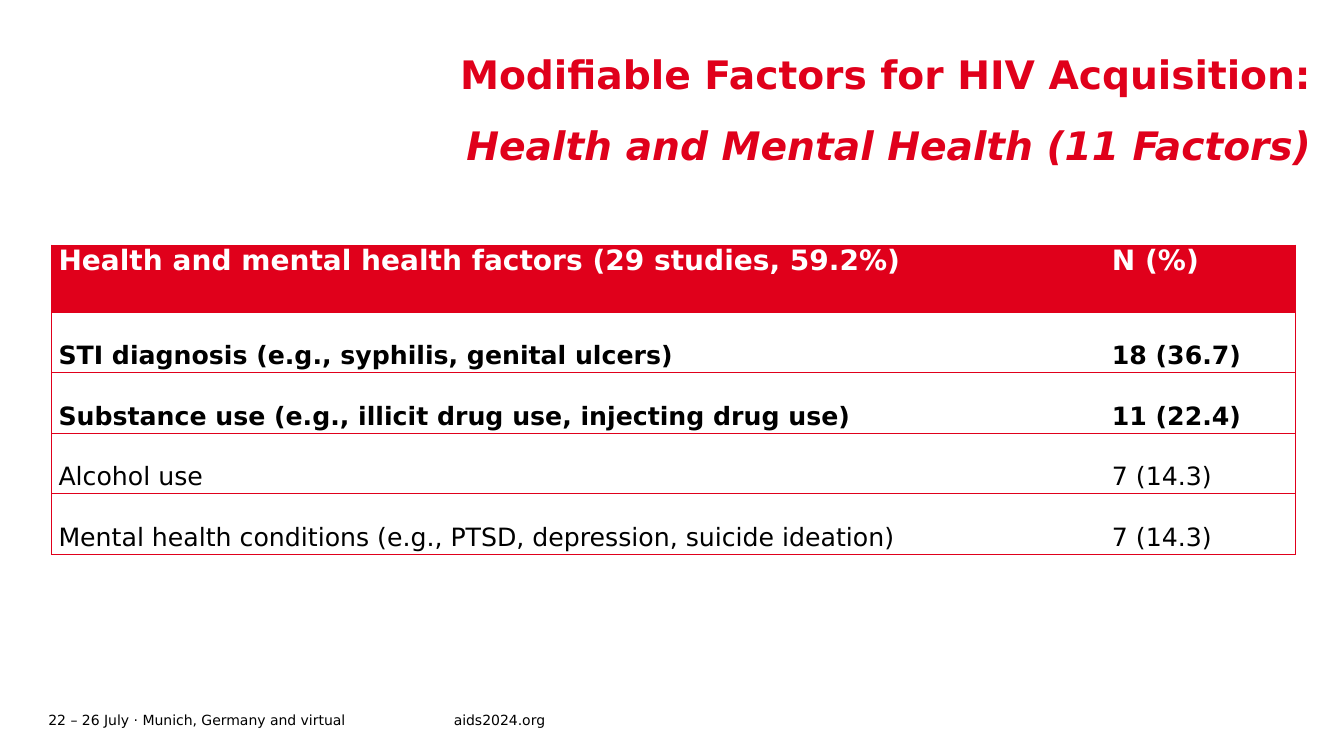
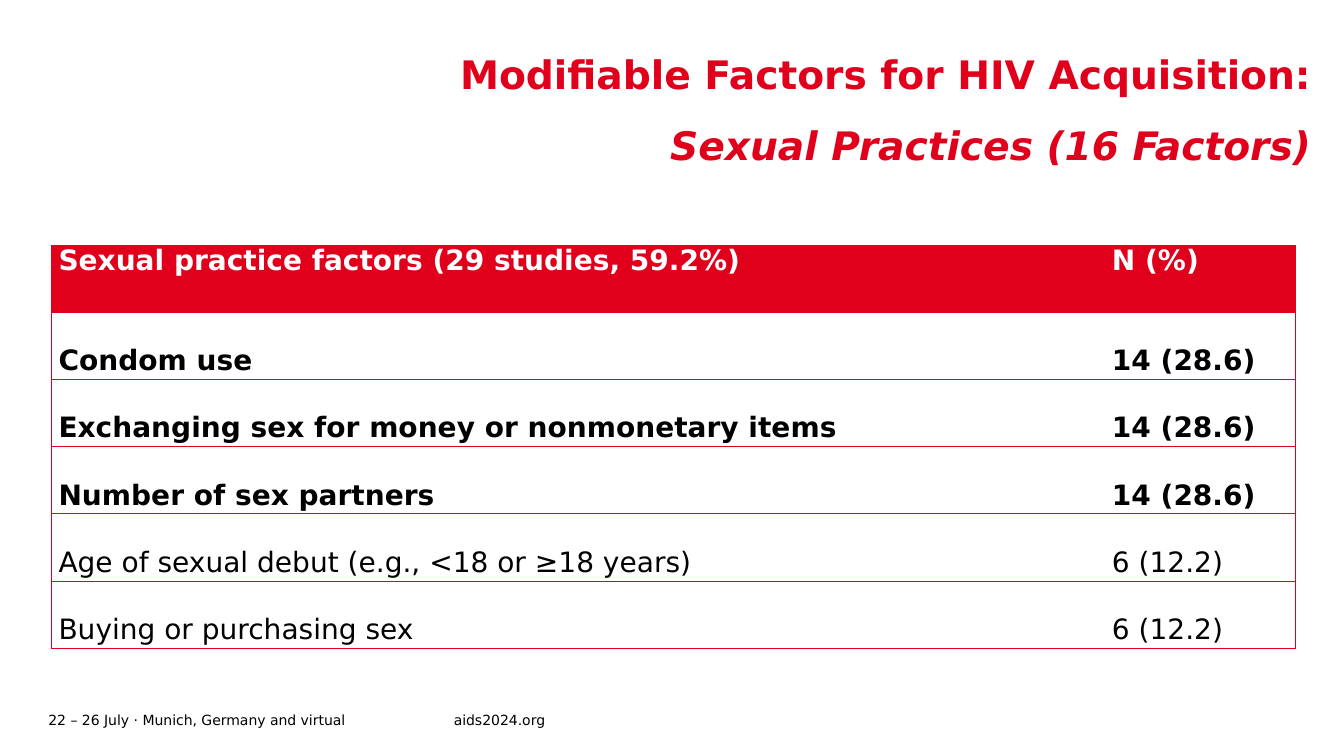
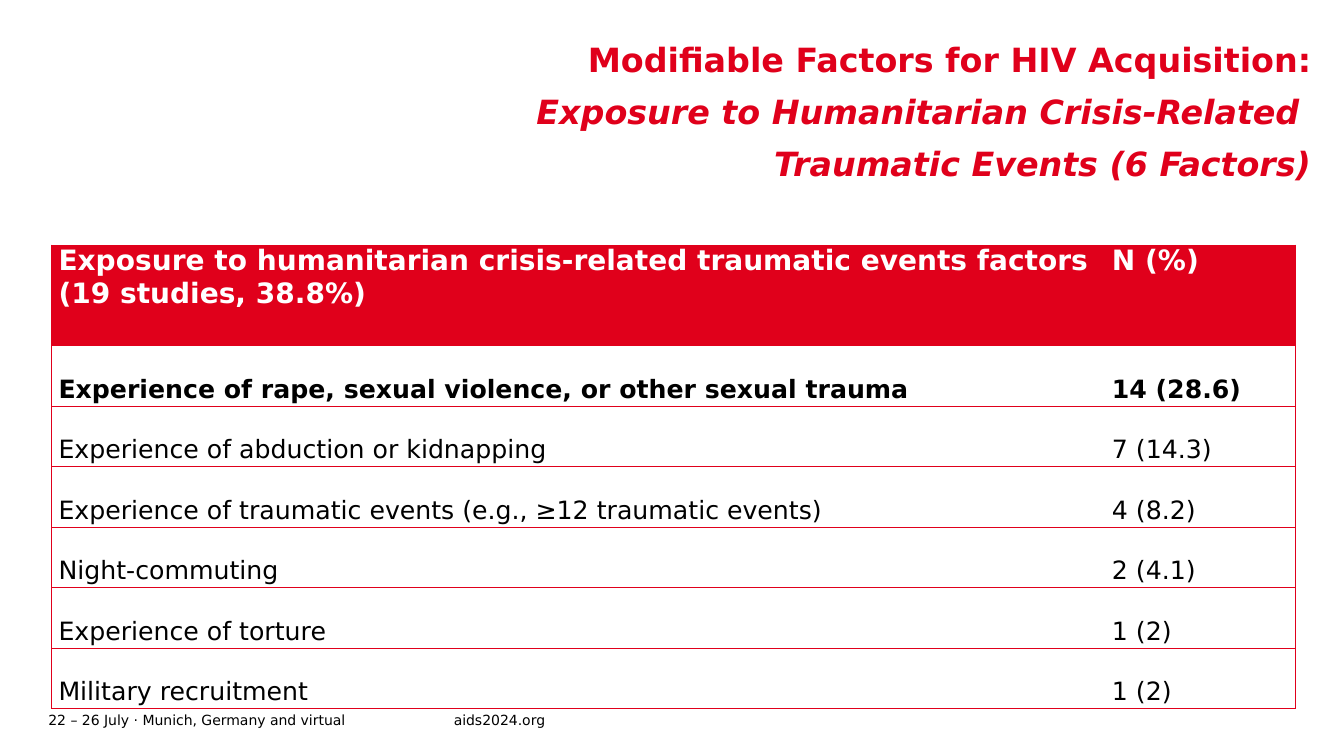
from lxml import etree
from pptx import Presentation
from pptx import util as u
from pptx.dml.color import RGBColor
from pptx.enum import text
from pptx.oxml import ns

COLORS = {"red": "E0001B", "white": "FFFFFF", "black": "000000"}
FONT = "DejaVu Sans"
HEADER_SIZE = 20
LINE_HEIGHT = 1.2
BORDER = u.Pt(0.5)

deck = Presentation()
deck.slide_width, deck.slide_height = u.Inches(13.33), u.Inches(7.5)
column, row = deck.slide_width / 100, deck.slide_height / 100


def style(frame, size, color, bold=False, spacing=None, align=None):
    """Format every paragraph and run of a text frame alike."""
    for para in frame.paragraphs:
        para.alignment = align
        para.line_spacing = spacing
        for span in para.runs:
            span.font.name, span.font.size = FONT, u.Pt(size)
            span.font.bold = bold
            span.font.color.rgb = RGBColor.from_string(COLORS[color])


def set_borders(cell, sides):
    """Draw the named sides (L, R, T, B) in red and hide the others."""
    properties = cell._tc.get_or_add_tcPr()
    for position, side in enumerate("LRTB"):
        line = etree.Element(ns.qn(f"a:ln{side}"), w=str(BORDER))
        if side in sides:
            fill = etree.SubElement(line, ns.qn("a:solidFill"))
            etree.SubElement(fill, ns.qn("a:srgbClr"), val=COLORS["red"])
        else:
            etree.SubElement(line, ns.qn("a:noFill"))
        properties.insert(position, line)


# Shared layout: title position and footer texts
layout = deck.slide_layouts.get_by_name("Title Only")
layout_title = layout.placeholders[0]
layout_title.left, layout_title.top = int(17.18 * column), int(3.6 * row)
layout_title.width, layout_title.height = int(80.34 * column), int(20.27 * row)

FOOTERS = [
    ("22 – 26 July · Munich, Germany and virtual", 3.6, 30.15),
    ("aids2024.org", 33.76, 14.48),
]

SLIDES = [
    {
        "title": "Health and Mental Health (11 Factors)",
        "title_size": 28, "title_spacing": 1.5, "body_size": 18, "bold_rows": 2,
        "header": "Health and mental health factors (29 studies, 59.2%)",
        "factors": [
            ("STI diagnosis (e.g., syphilis, genital ulcers)", "18 (36.7)"),
            ("Substance use (e.g., illicit drug use, injecting drug use)", "11 (22.4)"),
            ("Alcohol use", "7 (14.3)"),
            ("Mental health conditions (e.g., PTSD, depression, suicide ideation)", "7 (14.3)"),
        ],
    },
    {
        "title": "Sexual Practices (16 Factors)",
        "title_size": 28, "title_spacing": 1.5, "body_size": 20, "bold_rows": 3,
        "header": "Sexual practice factors (29 studies, 59.2%)",
        "factors": [
            ("Condom use", "14 (28.6)"),
            ("Exchanging sex for money or nonmonetary items", "14 (28.6)"),
            ("Number of sex partners", "14 (28.6)"),
            ("Age of sexual debut (e.g., <18 or ≥18 years)", "6 (12.2)"),
            ("Buying or purchasing sex", "6 (12.2)"),
        ],
    },
    {
        "title": "Exposure to Humanitarian Crisis-Related \nTraumatic Events (6 Factors)",
        "title_size": 23.8, "title_spacing": 1.3, "body_size": 18, "bold_rows": 1,
        "header": "Exposure to humanitarian crisis-related traumatic events factors\n"
                  "(19 studies, 38.8%)",
        "factors": [
            ("Experience of rape, sexual violence, or other sexual trauma", "14 (28.6)"),
            ("Experience of abduction or kidnapping", "7 (14.3)"),
            ("Experience of traumatic events (e.g., ≥12 traumatic events)", "4 (8.2)"),
            ("Night-commuting", "2 (4.1)"),
            ("Experience of torture", "1 (2)"),
            ("Military recruitment", "1 (2)"),
        ],
    },
]

pages = [deck.slides.add_slide(layout) for _ in SLIDES]

# Footer boxes are made on a page, then moved to the layout that all pages share
for words, left, width in FOOTERS:
    box = pages[0].shapes.add_textbox(
        int(left * column), int(93.6 * row), int(width * column), int(3.2 * row))
    frame = box.text_frame
    frame.text = words
    frame.word_wrap = True
    frame.vertical_anchor = text.MSO_ANCHOR.MIDDLE
    frame.margin_left = frame.margin_right = frame.margin_top = frame.margin_bottom = 0
    style(frame, 10, "black")
    layout.shapes.element.append(box.element)

for page, content in zip(pages, SLIDES):
    # Title: upright first line, italic topic below
    frame = page.shapes.title.text_frame
    frame.text = "Modifiable Factors for HIV Acquisition:\n" + content["title"]
    frame.auto_size = text.MSO_AUTO_SIZE.NONE
    frame.vertical_anchor = text.MSO_ANCHOR.TOP
    frame.margin_left = frame.margin_right = frame.margin_top = frame.margin_bottom = 0
    style(frame, content["title_size"], "red", True,
          content["title_spacing"], text.PP_ALIGN.RIGHT)
    for para in frame.paragraphs[1:]:
        para.runs[0].font.italic = True

    # Table: row heights follow from the text size
    rows = [(content["header"], "N (%)")] + content["factors"]
    header_lines = content["header"].count("\n") + 2
    header_height = u.Pt(header_lines * LINE_HEIGHT * HEADER_SIZE)
    body_height = u.Pt(2 * LINE_HEIGHT * content["body_size"])
    widths = [int(78.38 * column), int(14.16 * column)]
    table = page.shapes.add_table(
        len(rows), 2, int(3.83 * column), int(32.4 * row), sum(widths),
        header_height + body_height * len(content["factors"])).table
    table.first_row = table.horz_banding = False
    for table_column, width in zip(table.columns, widths):
        table_column.width = width

    for r, values in enumerate(rows):
        table.rows[r].height = body_height if r else header_height
        for c, words in enumerate(values):
            cell = table.cell(r, c)
            cell.text = words
            cell.margin_left = cell.margin_right = u.Inches(0.07)
            cell.margin_top = cell.margin_bottom = 0
            if r:
                cell.fill.background()
                style(cell.text_frame, content["body_size"], "black",
                      r <= content["bold_rows"], 2.0)
            else:
                cell.fill.solid()
                cell.fill.fore_color.rgb = RGBColor.from_string(COLORS["red"])
                style(cell.text_frame, HEADER_SIZE, "white", True)
            set_borders(cell, "LTB" if c == 0 else "RTB")

deck.save("out.pptx")
